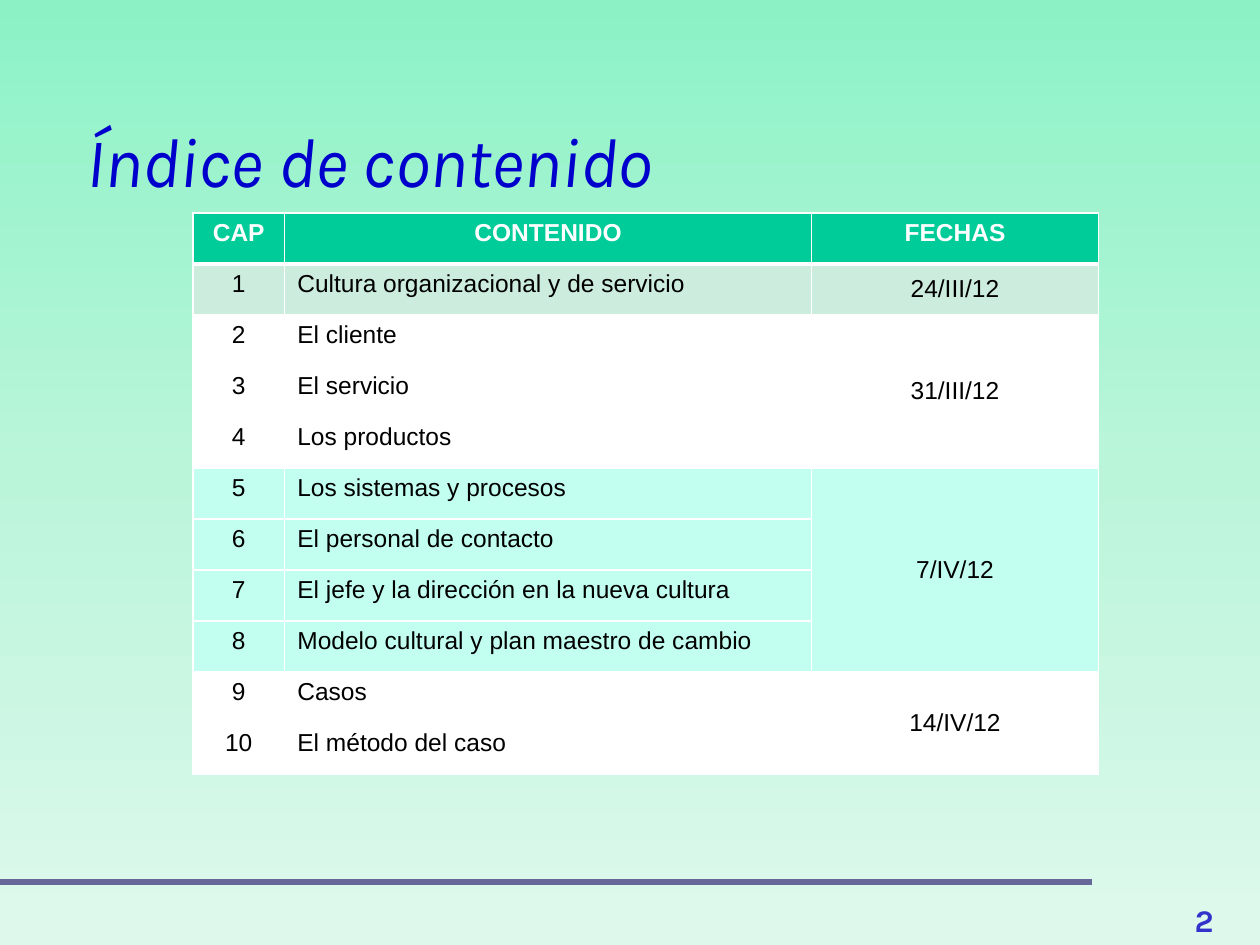
from copy import deepcopy

from pptx import Presentation
from pptx import util as u
from pptx.dml import color
from pptx.enum import shapes, text
from pptx.oxml import ns, xmlchemy

GRADIENT = [(0, "8CF2C6"), (0.5, "BAF5DA"), (1, "DEF9EC")]
COLUMN_WIDTHS = [0.73, 4.18, 2.28]
ROW_HEIGHT = 0.405
HEADINGS = ["CAP", "CONTENIDO", "FECHAS"]
SESSIONS = [
    ("24/III/12", "CCECDE", ["Cultura organizacional y de servicio"]),
    ("31/III/12", "FFFFFF", ["El cliente", "El servicio", "Los productos"]),
    ("7/IV/12", "C2FFF0", [
        "Los sistemas y procesos",
        "El personal de contacto",
        "El jefe y la dirección en la nueva cultura",
        "Modelo cultural y plan maestro de cambio",
    ]),
    ("14/IV/12", "FFFFFF", ["Casos", "El método del caso"]),
]


def rgb(value):
    return color.RGBColor.from_string(value)


def add_child(parent, tag, **attributes):
    child = xmlchemy.OxmlElement(tag)
    for name, value in attributes.items():
        child.set(name, str(value))
    parent.append(child)
    return child


def write(frame, content, size=14, font="Arial", ink="000000", bold=False,
          italic=False, align="LEFT", shadow=None):
    paragraph = frame.paragraphs[0]
    paragraph.alignment = getattr(text.PP_ALIGN, align)
    run = paragraph.add_run()
    run.text = content
    run.font.size = u.Pt(size)
    run.font.bold = bold
    run.font.italic = italic
    run.font.color.rgb = rgb(ink)
    if shadow:
        effects = add_child(run.font._element, "a:effectLst")
        outer = add_child(effects, "a:outerShdw", dist=u.Pt(3), dir=2700000)
        add_child(outer, "a:srgbClr", val=shadow)
    run.font.name = font


class SlideBuilder:
    def __init__(self, slide):
        self.slide = slide

    def background(self, stops):
        fill = self.slide.background.fill
        fill.gradient()
        fill.gradient_angle = 270
        stop_list = self.slide._element.find(".//" + ns.qn("a:gsLst"))
        stop_list.insert(1, deepcopy(stop_list[0]))
        for stop, (position, value) in zip(fill.gradient_stops, stops):
            stop.position = position
            stop.color.rgb = rgb(value)

    def line(self, left, top, right, bottom, ink, width):
        connector = self.slide.shapes.add_connector(
            shapes.MSO_CONNECTOR.STRAIGHT,
            *map(u.Inches, (left, top, right, bottom)))
        connector.line.color.rgb = rgb(ink)
        connector.line.width = u.Pt(width)
        add_child(connector._element.spPr, "a:effectLst")

    def text(self, left, top, width, height, content, **style):
        box = self.slide.shapes.add_textbox(
            *map(u.Inches, (left, top, width, height)))
        box.text_frame.word_wrap = True
        write(box.text_frame, content, **style)

    def cell(self, cell, content, fill, top=1, bottom=1, middle=False, **style):
        cell.fill.solid()
        cell.fill.fore_color.rgb = rgb(fill)
        if middle:
            cell.vertical_anchor = text.MSO_ANCHOR.MIDDLE
        properties = cell._tc.get_or_add_tcPr()
        edges = [("L", 1), ("R", 1), ("T", top), ("B", bottom)]
        for index, (side, width) in enumerate(edges):
            edge = add_child(properties, f"a:ln{side}", w=u.Pt(width))
            add_child(add_child(edge, "a:solidFill"), "a:srgbClr", val="FFFFFF")
            properties.insert(index, edge)
        if content:
            write(cell.text_frame, content, **style)

    def schedule(self, left, top, headings, sessions):
        count = 1 + sum(len(topics) for _, _, topics in sessions)
        table = self.slide.shapes.add_table(
            count, len(headings), u.Inches(left), u.Inches(top),
            u.Inches(sum(COLUMN_WIDTHS)), u.Inches(count * ROW_HEIGHT)).table
        for column, width in zip(table.columns, COLUMN_WIDTHS):
            column.width = u.Inches(width)
        for row in table.rows:
            row.height = u.Inches(ROW_HEIGHT)
        for column, heading in enumerate(headings):
            self.cell(table.cell(0, column), heading, "00CC99", bottom=3,
                      ink="FFFFFF", bold=True, align="CENTER")
        row = 1
        for date, fill, topics in sessions:
            first = row
            for topic in topics:
                edge = 3 if row == 1 else 1
                self.cell(table.cell(row, 0), str(row), fill, top=edge, align="CENTER")
                self.cell(table.cell(row, 1), topic, fill, top=edge)
                self.cell(table.cell(row, 2), date if row == first else "", fill,
                          top=edge, middle=True, align="CENTER")
                row += 1
            if len(topics) > 1:
                table.cell(first, 2).merge(table.cell(row - 1, 2))


def main():
    presentation = Presentation()
    presentation.slide_width = u.Inches(10)
    presentation.slide_height = u.Inches(7.5)
    builder = SlideBuilder(presentation.slides.add_slide(presentation.slide_layouts[6]))
    builder.background(GRADIENT)
    builder.line(0, 7, 8.67, 7, "666699", 3)
    builder.text(7.17, 7.1, 2.56, 0.35, "2", size=18, font="Karla",
                 ink="3333CC", bold=True, align="RIGHT")
    builder.text(0.59, 0.88, 8.51, 0.77, "Índice de contenido", size=40,
                 font="Karla", ink="0000CC", italic=True, shadow="CCCCFF")
    builder.schedule(1.53, 1.69, HEADINGS, SESSIONS)
    presentation.save("out.pptx")


if __name__ == "__main__":
    main()
